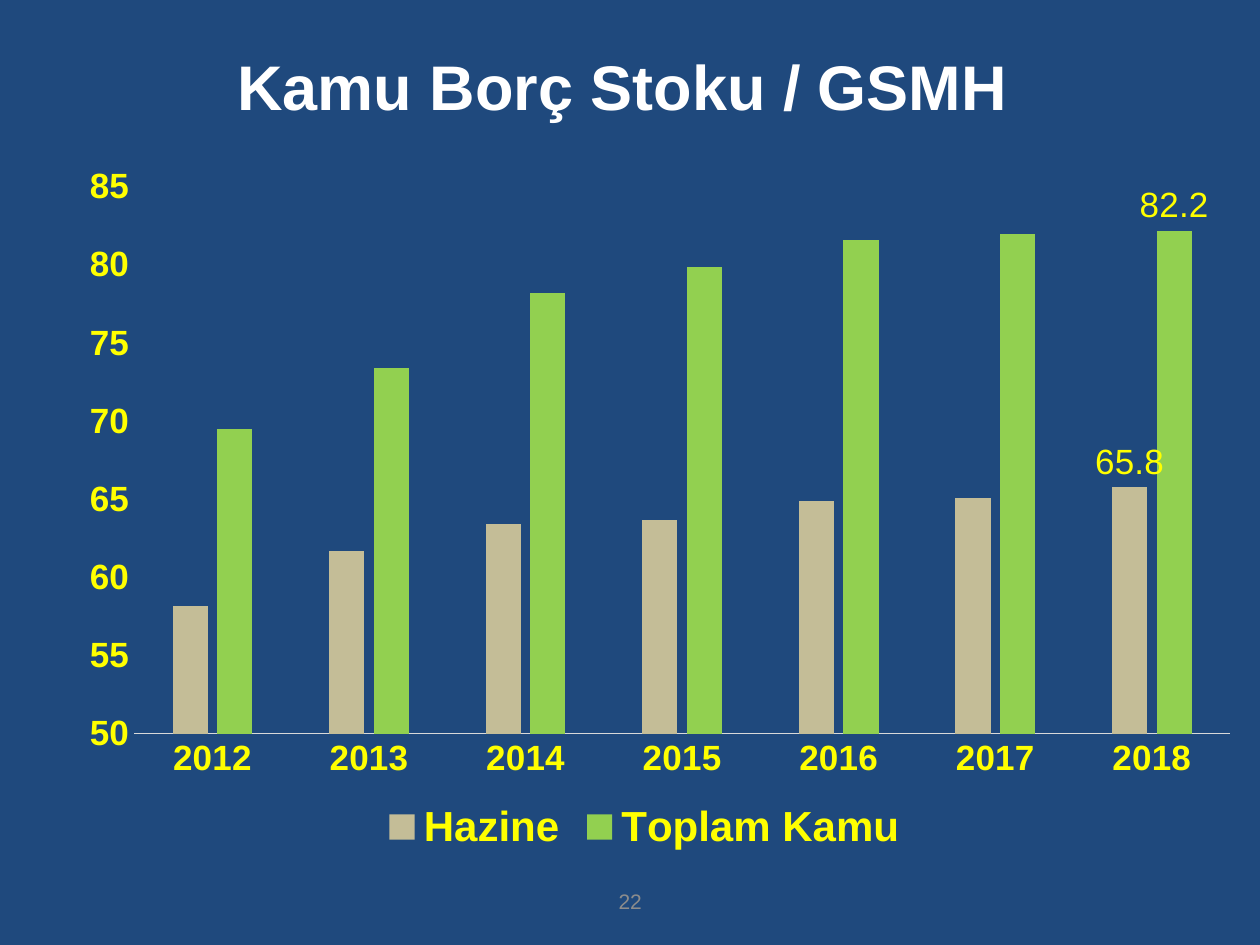
from dataclasses import dataclass

from lxml import etree
from pptx import Presentation
from pptx.chart.data import CategoryChartData
from pptx.dml.color import RGBColor
from pptx.enum.chart import XL_CHART_TYPE, XL_LABEL_POSITION, XL_LEGEND_POSITION, XL_TICK_MARK
from pptx.enum.text import MSO_ANCHOR, PP_ALIGN
from pptx.oxml.ns import qn
from pptx.util import Cm, Pt

COLUMN_CLUSTERED = XL_CHART_TYPE.COLUMN_CLUSTERED
OUTSIDE_END = XL_LABEL_POSITION.OUTSIDE_END
LEGEND_BOTTOM = XL_LEGEND_POSITION.BOTTOM
NO_TICK = XL_TICK_MARK.NONE
MIDDLE = MSO_ANCHOR.MIDDLE
CENTER = PP_ALIGN.CENTER


@dataclass(frozen=True)
class Theme:
    font: str = "Arial"
    background: str = "1F497D"
    title: str = "FFFFFF"
    chart_text: str = "FFFF00"
    axis_line: str = "D9D9D9"
    page_number: str = "8C8C8C"
    treasury: str = "C4BD97"
    public_total: str = "92D050"
    title_size: int = 36
    legend_size: int = 24
    axis_size: int = 20
    chart_size: int = 10
    page_number_size: int = 12


THEME = Theme()
YEARS = [str(year) for year in range(2012, 2019)]
DEBT_SERIES = [
    ("Hazine", THEME.treasury, [58.2, 61.7, 63.4, 63.7, 64.9, 65.1, 65.8]),
    ("Toplam Kamu", THEME.public_total, [69.5, 73.4, 78.2, 79.9, 81.6, 82, 82.2]),
]


def set_font(font, size, color, bold=False):
    font.name = THEME.font
    font.size = Pt(size)
    font.bold = bold
    font.color.rgb = RGBColor.from_string(color)


def fill_solid(fill, color):
    fill.solid()
    fill.fore_color.rgb = RGBColor.from_string(color)


def add_centered_text(slide, text, box, size, color, bold=False):
    shape = slide.shapes.add_textbox(*box)
    frame = shape.text_frame
    frame.word_wrap = True
    frame.vertical_anchor = MIDDLE
    paragraph = frame.paragraphs[0]
    paragraph.alignment = CENTER
    run = paragraph.add_run()
    run.text = text
    set_font(run.font, size, color, bold)


def set_plot_layout(chart, x, y, width, height):
    """Place the inner plot area, in fractions of the chart."""
    plot_area = chart.element.find(".//" + qn("c:plotArea"))
    for old_layout in plot_area.findall(qn("c:layout")):
        plot_area.remove(old_layout)
    layout = etree.Element(qn("c:layout"))
    manual = etree.SubElement(layout, qn("c:manualLayout"))
    settings = {
        "layoutTarget": "inner", "xMode": "edge", "yMode": "edge",
        "x": x, "y": y, "w": width, "h": height,
    }
    for name, value in settings.items():
        etree.SubElement(manual, qn(f"c:{name}")).set("val", str(value))
    plot_area.insert(0, layout)


def style_axis(axis):
    axis.major_tick_mark = NO_TICK
    axis.minor_tick_mark = NO_TICK
    axis.has_major_gridlines = False
    set_font(axis.tick_labels.font, THEME.axis_size, THEME.chart_text, bold=True)


def style_axes(chart):
    years, ratios = chart.category_axis, chart.value_axis
    for axis in (years, ratios):
        style_axis(axis)
    years.format.line.width = Pt(0.75)
    fill_solid(years.format.line.fill, THEME.axis_line)
    ratios.format.line.fill.background()
    ratios.minimum_scale = 50
    ratios.maximum_scale = 85
    ratios.major_unit = 5


def style_series(series, color):
    """Colour the columns and label the latest year only."""
    fill_solid(series.format.fill, color)
    series.invert_if_negative = False
    label = series.points[len(YEARS) - 1].data_label
    set_font(label.font, THEME.axis_size, THEME.chart_text)
    label.position = OUTSIDE_END


def add_debt_chart(slide, box):
    data = CategoryChartData()
    data.categories = YEARS
    for name, _, values in DEBT_SERIES:
        data.add_series(name, values)
    chart = slide.shapes.add_chart(COLUMN_CLUSTERED, *box, data).chart
    chart.has_title = False
    set_font(chart.font, THEME.chart_size, THEME.chart_text)

    plot = chart.plots[0]
    plot.vary_by_categories = False
    plot.gap_width = 219
    plot.overlap = -27
    for series, (_, color, _) in zip(plot.series, DEBT_SERIES):
        style_series(series, color)

    style_axes(chart)
    chart.has_legend = True
    chart.legend.position = LEGEND_BOTTOM
    chart.legend.include_in_layout = False
    set_font(chart.legend.font, THEME.legend_size, THEME.chart_text, bold=True)
    set_plot_layout(chart, 0.075, 0.072, 0.913, 0.755)


def main():
    presentation = Presentation()
    presentation.slide_width = Cm(25.4)
    presentation.slide_height = Cm(19.05)
    slide = presentation.slides.add_slide(presentation.slide_layouts[6])
    fill_solid(slide.background.fill, THEME.background)

    add_centered_text(slide, "22", (Cm(8.68), Cm(17.65), Cm(8.05), Cm(1.02)),
                      THEME.page_number_size, THEME.page_number)
    add_debt_chart(slide, (Cm(0.89), Cm(2.72), Cm(24.2), Cm(14.6)))
    add_centered_text(slide, "Kamu Borç Stoku / GSMH", (Cm(0), Cm(0.33), Cm(25.1), Cm(2.8)),
                      THEME.title_size, THEME.title, bold=True)
    presentation.save("out.pptx")


if __name__ == "__main__":
    main()
